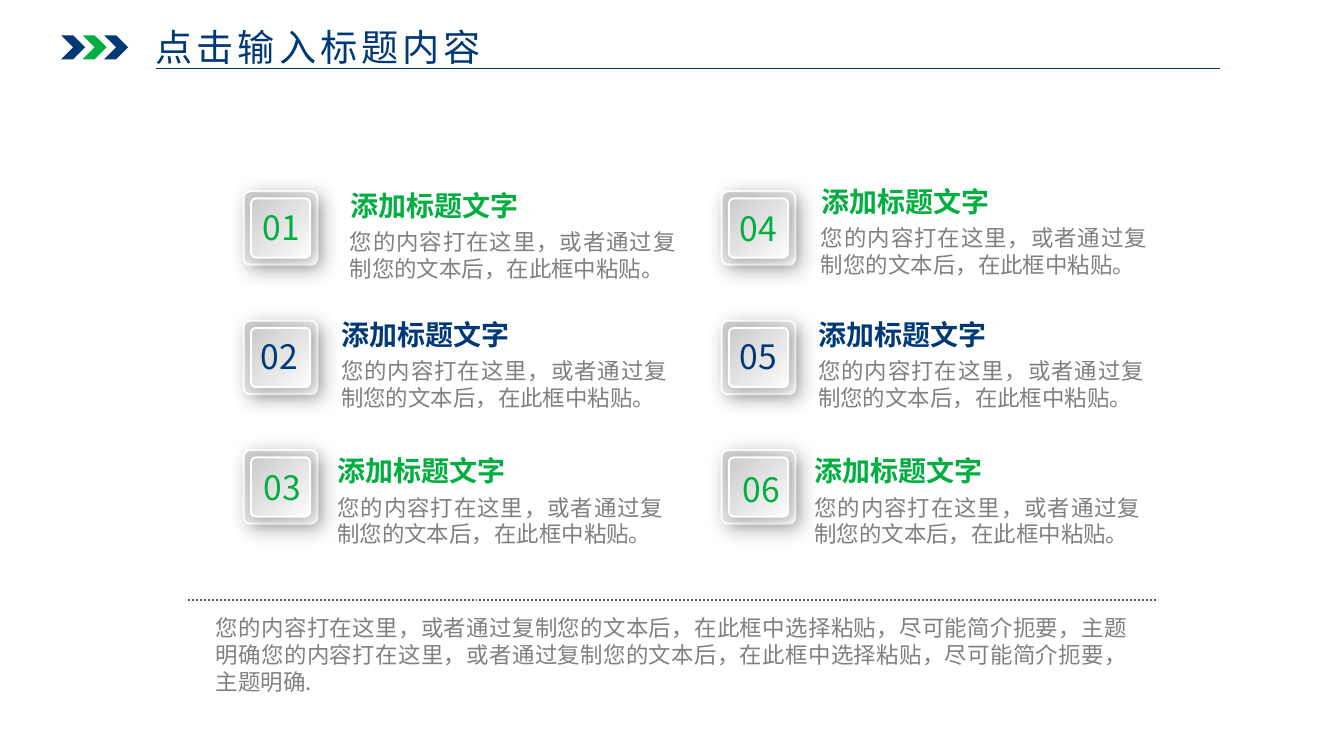
from dataclasses import dataclass

from lxml.etree import SubElement
from pptx import Presentation
from pptx.dml.color import RGBColor as RGB
from pptx.enum.dml import MSO_LINE
from pptx.enum.shapes import MSO_CONNECTOR as CONN, MSO_SHAPE as SHAPE
from pptx.enum.text import MSO_ANCHOR as ANCHOR, PP_ALIGN as ALIGN
from pptx.oxml.ns import qn
from pptx.util import Inches, Pt


@dataclass(frozen=True)
class Theme:
    font: str = "Noto Sans CJK SC"
    navy: RGB = RGB(0x00, 0x39, 0x78)
    green: RGB = RGB(0x01, 0xAF, 0x40)
    gray: RGB = RGB(0x80, 0x80, 0x80)
    dark: RGB = RGB(0x59, 0x59, 0x59)
    white: RGB = RGB(0xFF, 0xFF, 0xFF)
    tile_from: RGB = RGB(0xCC, 0xCC, 0xCC)
    tile_to: RGB = RGB(0xFC, 0xFC, 0xFC)
    title: float = 28
    number: float = 25.3
    heading: float = 21.1
    body: float = 16.9


T = Theme()
HEADING = "添加标题文字"
DETAIL = "您的内容打在这里，或者通过复制您的文本后，在此框中粘贴。"
SUMMARY = ("您的内容打在这里，或者通过复制您的文本后，在此框中选择粘贴，尽可能简介扼要，"
           "主题明确您的内容打在这里，或者通过复制您的文本后，在此框中选择粘贴，"
           "尽可能简介扼要，主题明确.")

# Per item: number offset from the tile, then text offset from the tile
COLUMNS = [
    [((0.02, 0.11), (1.00, -0.08)), ((0.00, 0.11), (0.91, -0.08)),
     ((0.03, 0.12), (0.87, -0.01))],
    [((0.01, 0.12), (0.93, -0.12)), ((0.01, 0.11), (0.90, -0.08)),
     ((0.04, 0.14), (0.86, -0.01))],
]


def add_run(p, text, size, color, bold=False):
    r = p.add_run()
    r.text = text
    r.font.size, r.font.bold = Pt(size), bold
    r.font.color.rgb = color
    r.font.name = T.font
    SubElement(r._r.get_or_add_rPr(), qn("a:ea"), typeface=T.font)
    return r


def add_text(s, box, text, size, color, align, bold=False, tight=True):
    tf = s.shapes.add_textbox(*map(Inches, box)).text_frame
    tf.word_wrap = True
    tf.vertical_anchor = ANCHOR.TOP if tight else ANCHOR.MIDDLE
    p = tf.paragraphs[0]
    p.alignment = align
    if tight:
        p.line_spacing = Pt(round(size * 1.2, 1))
    add_run(p, text, size, color, bold)


def add_line(s, x1, x2, y, color, width, dash=None):
    line = s.shapes.add_connector(CONN.STRAIGHT, *map(Inches, (x1, y, x2, y)))
    line.line.color.rgb, line.line.width = color, Pt(width)
    if dash:
        line.line.dash_style = dash
    SubElement(line._element.spPr, qn("a:effectLst"))


def add_plate(s, x, y, side, blur, dist):
    """Rounded gradient square with a soft shadow."""
    sp = s.shapes.add_shape(SHAPE.ROUNDED_RECTANGLE,
                            *map(Inches, (x, y, side, side)))
    sp.adjustments[0] = 0.087
    sp.fill.gradient()
    sp.fill.gradient_angle = 315
    for stop, color, pos in zip(sp.fill.gradient_stops,
                                (T.tile_from, T.tile_to), (0.01, 1)):
        stop.color.rgb, stop.position = color, pos
    sp.line.color.rgb, sp.line.width = T.white, Pt(1.5)
    sp.shadow.inherit = False
    effects = sp._element.spPr.find(qn("a:effectLst"))
    shadow = SubElement(effects, qn("a:outerShdw"), blurRad=str(Pt(blur)),
                        dist=str(Pt(dist)), dir="2700000", algn="tl",
                        rotWithShape="0")
    black = SubElement(shadow, qn("a:srgbClr"), val="000000")
    SubElement(black, qn("a:alpha"), val="30000")


def header(s, x, y, width):
    # Chevrons
    for i, color in enumerate((T.navy, T.green, T.navy)):
        sp = s.shapes.add_shape(SHAPE.CHEVRON, *map(
            Inches, (x + i * 0.225, y + 0.16, 0.25, 0.25)))
        sp.fill.solid()
        sp.fill.fore_color.rgb = color
        sp.line.fill.background()
        sp.shadow.inherit = False
    # Title and rule
    title = s.shapes.title
    title.left, title.top, title.width, title.height = map(
        Inches, (x + 0.91, y, 4.29, 0.55))
    tf = title.text_frame
    tf.word_wrap = True
    tf.vertical_anchor = ANCHOR.MIDDLE
    tf.margin_left = tf.margin_right = Inches(0.08)
    tf.margin_top = tf.margin_bottom = Inches(0.04)
    p = tf.paragraphs[0]
    p.alignment = ALIGN.LEFT
    r = add_run(p, "点击输入标题内容", T.title, T.navy)
    r._r.get_or_add_rPr().set("spc", "300")
    add_line(s, x + 0.99, x + width, y + 0.51, T.navy, 0.5)


def item(s, x, y, number, color, number_at, text_at):
    # Tile
    add_plate(s, x, y, 0.77, 15, 5)
    add_plate(s, x + 0.075, y + 0.075, 0.62, 11, 3)
    dx, dy = number_at
    add_text(s, (x + dx, y + dy, 0.75, 0.53), f"{number:02d}",
             T.number, color, ALIGN.CENTER, tight=False)
    # Heading and detail
    dx, dy = text_at
    add_text(s, (x + dx, y + dy, 1.99, 0.46), HEADING,
             T.heading, color, ALIGN.CENTER, bold=True)
    add_text(s, (x + dx + 0.01, y + dy + 0.415, 3.61, 0.67), DETAIL,
             T.body, T.gray, ALIGN.JUSTIFY)


def item_grid(s, x, y, col_gap, row_gap):
    for c, column in enumerate(COLUMNS):
        for i, (number_at, text_at) in enumerate(column):
            item(s, x + c * col_gap, y + i * row_gap, c * len(column) + i + 1,
                 T.navy if i % 2 else T.green, number_at, text_at)


def summary(s, x, y, width):
    add_line(s, x, x + width, y, T.dark, 1.5, MSO_LINE.ROUND_DOT)
    add_text(s, (x + 0.19, y + 0.1, width - 0.38, 1.24), SUMMARY,
             T.body, T.gray, ALIGN.JUSTIFY)


def main():
    prs = Presentation()
    prs.slide_width, prs.slide_height = Inches(14.06), Inches(7.91)
    s = prs.slides.add_slide(prs.slide_layouts[5])
    header(s, 0.64, 0.21, 12.12)
    item_grid(s, 2.55, 2, 5, 1.355)
    summary(s, 1.97, 6.28, 10.12)
    prs.save("out.pptx")


if __name__ == "__main__":
    main()
